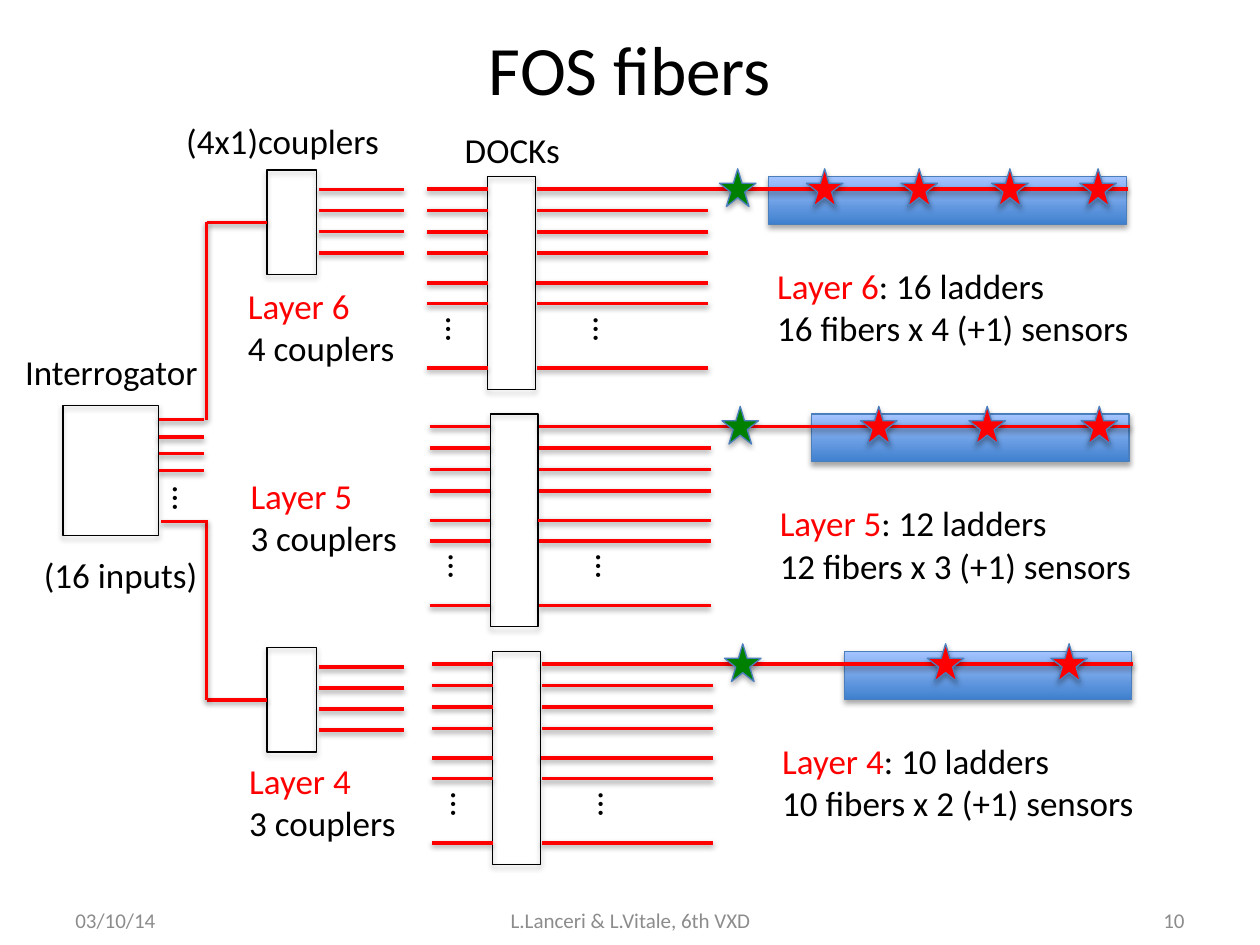
"""Build the FOS fibers slide: interrogator, couplers, docks and sensor ladders."""
from pptx import Presentation
from pptx.dml.color import RGBColor
from pptx.enum.shapes import MSO_CONNECTOR, MSO_SHAPE
from pptx.enum.text import MSO_ANCHOR, MSO_AUTO_SIZE, PP_ALIGN
from pptx.oxml import parse_xml
from pptx.util import Inches, Pt

RECTANGLE, STAR = MSO_SHAPE.RECTANGLE, MSO_SHAPE.STAR_5_POINT
STRAIGHT = MSO_CONNECTOR.STRAIGHT
TOP, MIDDLE = MSO_ANCHOR.TOP, MSO_ANCHOR.MIDDLE
GROW, FIXED = MSO_AUTO_SIZE.SHAPE_TO_FIT_TEXT, MSO_AUTO_SIZE.NONE
LEFT, CENTER, RIGHT = PP_ALIGN.LEFT, PP_ALIGN.CENTER, PP_ALIGN.RIGHT
LEFT_SIDE, RIGHT_SIDE = 1, 3

COLORS = {
    "black": "000000", "red": "FF0000", "green": "008000", "gray": "8C8C8C",
    "edge": "4B7EBC", "ladder dark": "3F80CE", "ladder light": "A4C4FF",
}
RGB = {name: RGBColor.from_string(value) for name, value in COLORS.items()}
NOTE_FRAME = {"word_wrap": False, "auto_size": GROW, "vertical_anchor": TOP}
FOOTER_FRAME = {"word_wrap": True, "auto_size": FIXED, "vertical_anchor": MIDDLE}
NOTE_FONT = {"name": "Calibri", "size": Pt(20)}
FOOTER_FONT = {"name": "Calibri", "size": Pt(12)}
TITLE_FONT = {"name": "Calibri", "size": Pt(39.6)}
SHADOW = (
    '<a:effectLst xmlns:a="http://schemas.openxmlformats.org/drawingml/2006/main">'
    '<a:outerShdw blurRad="40000" dist="{}" dir="5400000" rotWithShape="0">'
    '<a:srgbClr val="000000"><a:alpha val="{}"/></a:srgbClr>'
    '</a:outerShdw></a:effectLst>'
)

presentation = Presentation()
presentation.slide_width, presentation.slide_height = Inches(10), Inches(7.5)
COLUMN = presentation.slide_width / 100
ROW = presentation.slide_height / 75
slide = presentation.slides.add_slide(presentation.slide_layouts[5])


def add_box(kind, left, top, width, height, fill=None, edge="edge"):
    shape = slide.shapes.add_shape(
        kind, int(left * COLUMN), int(top * ROW), int(width * COLUMN), int(height * ROW))
    if fill == "ladder":
        shape.fill.gradient()
        shape.fill.gradient_angle = 90
        for stop, name in zip(shape.fill.gradient_stops, ("ladder dark", "ladder light")):
            stop.color.rgb = RGB[name]
    elif fill:
        shape.fill.solid()
        shape.fill.fore_color.rgb = RGB[fill]
    else:
        shape.fill.background()
    shape.line.color.rgb = RGB[edge]
    shape.line.width = Pt(0.75)
    shape.element.spPr.append(parse_xml(SHADOW.format(23000, 35000)))
    return shape


def add_fiber(from_column, from_row, to_column, to_row):
    fiber = slide.shapes.add_connector(
        STRAIGHT, int(from_column * COLUMN), int(from_row * ROW),
        int(to_column * COLUMN), int(to_row * ROW))
    fiber.line.color.rgb = RGB["red"]
    fiber.line.width = Pt(2)
    fiber.element.spPr.append(parse_xml(SHADOW.format(20000, 38000)))
    return fiber


title = slide.shapes.title
title.left, title.top = int(5 * COLUMN), int(1.4 * ROW)
title.width, title.height = int(90 * COLUMN), int(8 * ROW)
title.text_frame.text = "FOS fibers"
title.text_frame.vertical_anchor = MIDDLE
title_paragraph = title.text_frame.paragraphs[0]
title_paragraph.alignment = CENTER
title_font = title_paragraph.runs[0].font
title_font.color.rgb = RGB["black"]
for attribute, value in TITLE_FONT.items():
    setattr(title_font, attribute, value)

notes = [
    ((35.9, 9.7, 9.6, 4.4), 0, [[("DOCKs", "black")]]),
    ((13.8, 9, 17.4, 4.4), 0, [[("(4x1)couplers", "black")]]),
    ((1, 27.3, 15.8, 4.4), 0, [[("Interrogator", "black")]]),
    ((2.5, 43.4, 14.3, 4.4), 0, [[("(16 inputs)", "black")]]),
    ((12.8, 37.4, 4, 4.4), 90, [[("…", "black")]]),
]

# layer, couplers, ladders, ladder left, sensor lefts, coupler note position
layers = [
    (6, 4, 16, 61, (64, 71.5, 78.7, 85.7), (18.7, 22.1)),
    (5, 3, 12, 64.4, (68.3, 76.9, 85.8), (18.9, 37.2)),
    (4, 3, 10, 67, (73.6, 83.4), (18.8, 59.8)),
]
LANES = (1, 2.7, 4.4, 6.1, 8.45, 10.1, 15.2)
DOCK_MIDDLE = 8.45
for index, (layer, couplers, ladders, ladder_left, sensors, note_at) in enumerate(layers):
    shift, top = 0.2 * index, 14 + 18.85 * index
    add_box(RECTANGLE, ladder_left, top, 89.4 + shift - ladder_left, 3.8, "ladder")
    dock = add_box(RECTANGLE, 38.7 + shift, top, 3.8, 16.9, edge="black")
    for lane in LANES:
        end = 89.5 if lane == LANES[0] else 56.2
        incoming = add_fiber(33.9 + shift, top + lane, 38.7 + shift, top + lane)
        outgoing = add_fiber(42.6 + shift, top + lane, end + shift, top + lane)
        if lane == DOCK_MIDDLE:
            incoming.end_connect(dock, LEFT_SIDE)
            outgoing.begin_connect(dock, RIGHT_SIDE)
    add_box(STAR, 57.1 + shift, top - 0.6, 2.9, 3, "green")
    for sensor_left in sensors:
        add_box(STAR, sensor_left, top - 0.6, 2.9, 3, "red")

    name = (f"Layer {layer}", "red")
    notes += [
        ((60.7 + shift, top + 6.5, 30.1, 7.7), 0,
         [[name, (f": {ladders} ladders", "black")],
          [(f"{ladders} fibers x {len(sensors)} (+1) sensors", "black")]]),
        ((*note_at, 13.7, 7.7), 0, [[name], [(f"{couplers} couplers", "black")]]),
    ]
    notes += [((left + shift, top + 10, 4, 4.4), 90, [[("…", "black")]])
              for left in (34.5, 46.2)]

for coupler_top, trunk_row in ((13.5, 33.3), (51.4, 41.3)):
    coupler = add_box(RECTANGLE, 21.2, coupler_top, 3.9, 8.3, edge="black")
    for lane in range(4):
        lane_row = coupler_top + 1.55 + 1.67 * lane
        add_fiber(25.3, lane_row, 32.1, lane_row)
    coupler_middle = coupler_top + 4.15
    add_fiber(16.4, coupler_middle, 21.2, coupler_middle).end_connect(coupler, LEFT_SIDE)
    add_fiber(16.4, trunk_row, 16.4, coupler_middle)

interrogator = add_box(RECTANGLE, 5, 32.2, 7.6, 10.3, edge="black")
for input_row in (33.3, 34.7, 36):
    add_fiber(12.6, input_row, 16.2, input_row)
add_fiber(12.8, 41.4, 16.4, 41.4)
add_fiber(12.6, 37.35, 16.2, 37.35).begin_connect(interrogator, RIGHT_SIDE)

labels = [(*note, LEFT, NOTE_FRAME, NOTE_FONT) for note in notes]
labels += [
    ((left, 71, width, 4), 0, [[(text, "gray")]], alignment, FOOTER_FRAME, FOOTER_FONT)
    for left, width, text, alignment in (
        (5, 23.3, "03/10/14", LEFT),
        (34.2, 31.7, "L.Lanceri & L.Vitale, 6th VXD", CENTER),
        (71.7, 23.3, "10", RIGHT))
]
for (left, top, width, height), rotation, lines, alignment, frame_format, font_format in labels:
    label = slide.shapes.add_textbox(
        int(left * COLUMN), int(top * ROW), int(width * COLUMN), int(height * ROW))
    label.rotation = rotation
    frame = label.text_frame
    for attribute, value in frame_format.items():
        setattr(frame, attribute, value)
    for number, line in enumerate(lines):
        paragraph = frame.add_paragraph() if number else frame.paragraphs[0]
        paragraph.alignment = alignment
        for text, color in line:
            run = paragraph.add_run()
            run.text = text
            run.font.color.rgb = RGB[color]
            for attribute, value in font_format.items():
                setattr(run.font, attribute, value)

presentation.save("out.pptx")
